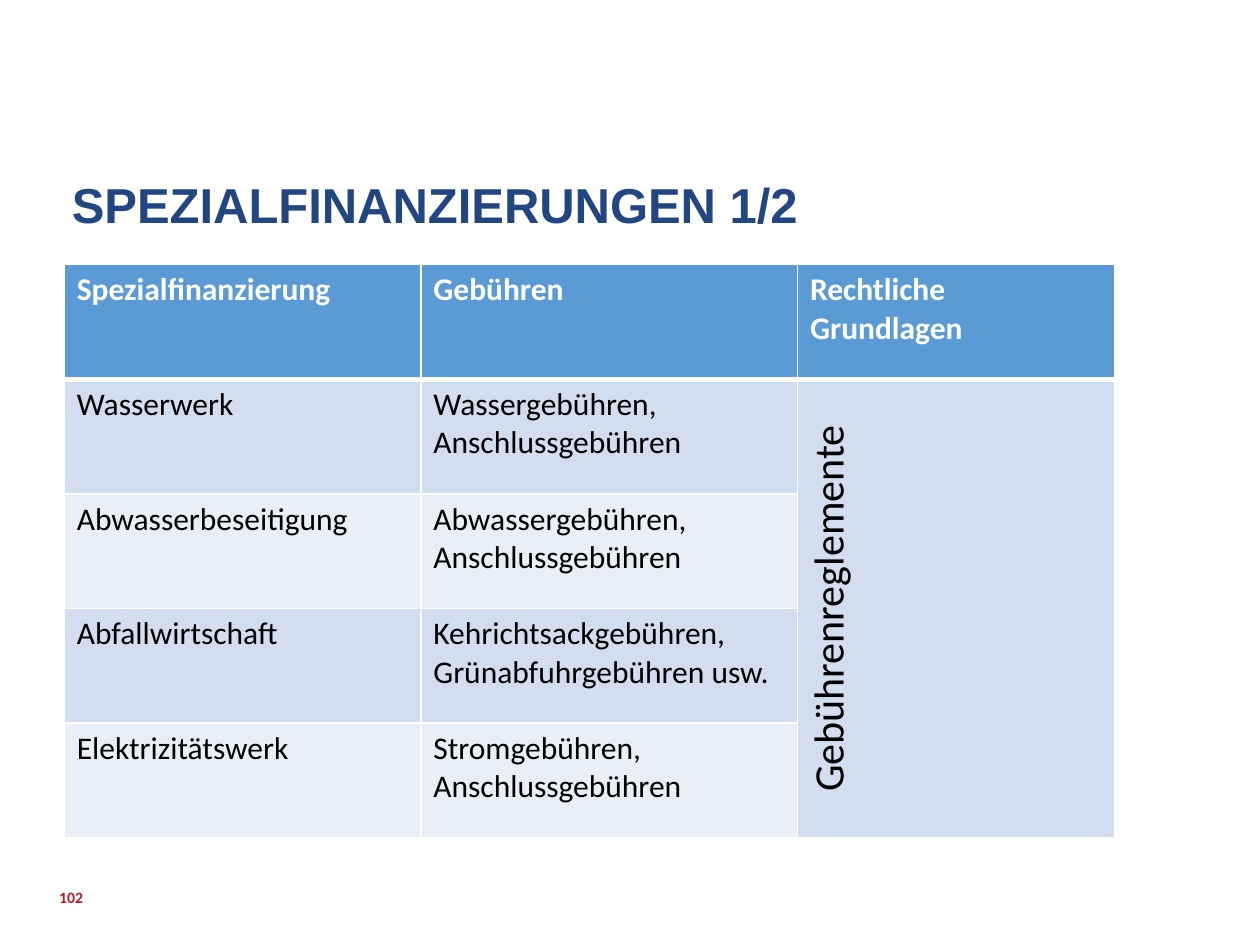
from dataclasses import dataclass
from typing import Optional

from lxml.etree import SubElement
from pptx import Presentation
from pptx.dml.color import RGBColor
from pptx.enum.text import MSO_ANCHOR, MSO_AUTO_SIZE, PP_ALIGN
from pptx.oxml.ns import qn
from pptx.util import Inches, Pt


@dataclass(frozen=True)
class Theme:
    heading_font: str = "Arial"
    body_font: str = "Calibri"
    title_size: int = 28
    body_size: int = 18
    merged_size: int = 24
    number_size: int = 9
    title: str = "224681"
    number: str = "B21D24"
    white: str = "FFFFFF"
    black: str = "000000"
    header: str = "5B9BD5"
    bands: tuple[str, str] = ("D2DEEF", "EAEFF7")
    thin_border: int = 1
    thick_border: int = 3


@dataclass(frozen=True)
class Fund:
    name: str
    fees: str


THEME = Theme()
PAGE_WIDTH, PAGE_HEIGHT = 10, 7.5
TABLE_LEFT, TABLE_TOP = 0.51, 2.1
COLUMN_WIDTHS = (2.83, 2.99, 2.52)
ROW_HEIGHT = 0.91
HEADINGS = ("Spezialfinanzierung", "Gebühren", "Rechtliche Grundlagen")
LEGAL_BASIS = "Gebührenreglemente"
FUNDS = (
    Fund("Wasserwerk", "Wassergebühren, Anschlussgebühren"),
    Fund("Abwasserbeseitigung", "Abwassergebühren, Anschlussgebühren"),
    Fund("Abfallwirtschaft", "Kehrichtsackgebühren, Grünabfuhrgebühren usw."),
    Fund("Elektrizitätswerk", "Stromgebühren, Anschlussgebühren"),
)


def write_text(frame, text: str, *, size: int = THEME.body_size, color: str = THEME.black,
               font: str = THEME.body_font, bold: bool = False,
               align: PP_ALIGN = PP_ALIGN.LEFT, line_spacing: Optional[float] = None) -> None:
    para = frame.paragraphs[0]
    para.alignment = align
    if line_spacing:
        para.line_spacing = line_spacing
    span = para.add_run()
    span.text = text
    span.font.name = font
    span.font.size = Pt(size)
    span.font.bold = bold
    span.font.color.rgb = RGBColor.from_string(color)


def style_cell(cell, fill: str, top: int = THEME.thin_border,
               bottom: int = THEME.thin_border) -> None:
    """Draw the four white borders, then the fill that must follow them in the XML."""
    properties = cell._tc.get_or_add_tcPr()
    widths = {"a:lnL": THEME.thin_border, "a:lnR": THEME.thin_border,
              "a:lnT": top, "a:lnB": bottom}
    for tag, width in widths.items():
        line = SubElement(properties, qn(tag), w=str(Pt(width)))
        solid = SubElement(line, qn("a:solidFill"))
        SubElement(solid, qn("a:srgbClr"), val=THEME.white)
    cell.fill.solid()
    cell.fill.fore_color.rgb = RGBColor.from_string(fill)


def add_title(page, text: str) -> None:
    box = page.shapes.title
    box.left, box.top, box.width, box.height = map(Inches, (0.47, 1.39, 7.64, 0.94))
    frame = box.text_frame
    frame.auto_size = MSO_AUTO_SIZE.NONE
    frame.vertical_anchor = MSO_ANCHOR.TOP
    write_text(frame, text, size=THEME.title_size, color=THEME.title,
               font=THEME.heading_font, bold=True, line_spacing=0.9)


def add_fund_table(page) -> None:
    row_count = len(FUNDS) + 1
    table = page.shapes.add_table(
        row_count, len(HEADINGS), Inches(TABLE_LEFT), Inches(TABLE_TOP),
        Inches(sum(COLUMN_WIDTHS)), Inches(ROW_HEIGHT * row_count)).table
    for column, width in zip(table.columns, COLUMN_WIDTHS):
        column.width = Inches(width)

    for index, heading in enumerate(HEADINGS):
        cell = table.cell(0, index)
        style_cell(cell, THEME.header, bottom=THEME.thick_border)
        write_text(cell.text_frame, heading, color=THEME.white, bold=True)

    legal_column = len(HEADINGS) - 1
    for row, fund in enumerate(FUNDS, start=1):
        top = THEME.thick_border if row == 1 else THEME.thin_border
        band = THEME.bands[(row - 1) % 2]
        for index, text in enumerate((fund.name, fund.fees)):
            cell = table.cell(row, index)
            style_cell(cell, band, top=top)
            write_text(cell.text_frame, text)
        style_cell(table.cell(row, legal_column), THEME.bands[0], top=top)

    legal = table.cell(1, legal_column)
    legal.merge(table.cell(len(FUNDS), legal_column))
    legal.vertical_anchor = MSO_ANCHOR.MIDDLE
    legal._tc.get_or_add_tcPr().set("vert", "vert270")
    write_text(legal.text_frame, LEGAL_BASIS, size=THEME.merged_size, align=PP_ALIGN.CENTER)


def add_page_number(page, number: str) -> None:
    box = page.shapes.add_textbox(*map(Inches, (0.47, 6.92, 2.25, 0.4)))
    frame = box.text_frame
    frame.word_wrap = True
    frame.vertical_anchor = MSO_ANCHOR.MIDDLE
    frame.margin_left = frame.margin_right = frame.margin_top = frame.margin_bottom = 0
    write_text(frame, number, size=THEME.number_size, color=THEME.number, bold=True)


def main() -> None:
    deck = Presentation()
    deck.slide_width, deck.slide_height = Inches(PAGE_WIDTH), Inches(PAGE_HEIGHT)
    page = deck.slides.add_slide(deck.slide_layouts.get_by_name("Title Only"))
    add_title(page, "SPEZIALFINANZIERUNGEN 1/2")
    add_fund_table(page)
    add_page_number(page, "102")
    deck.save("out.pptx")


if __name__ == "__main__":
    main()
